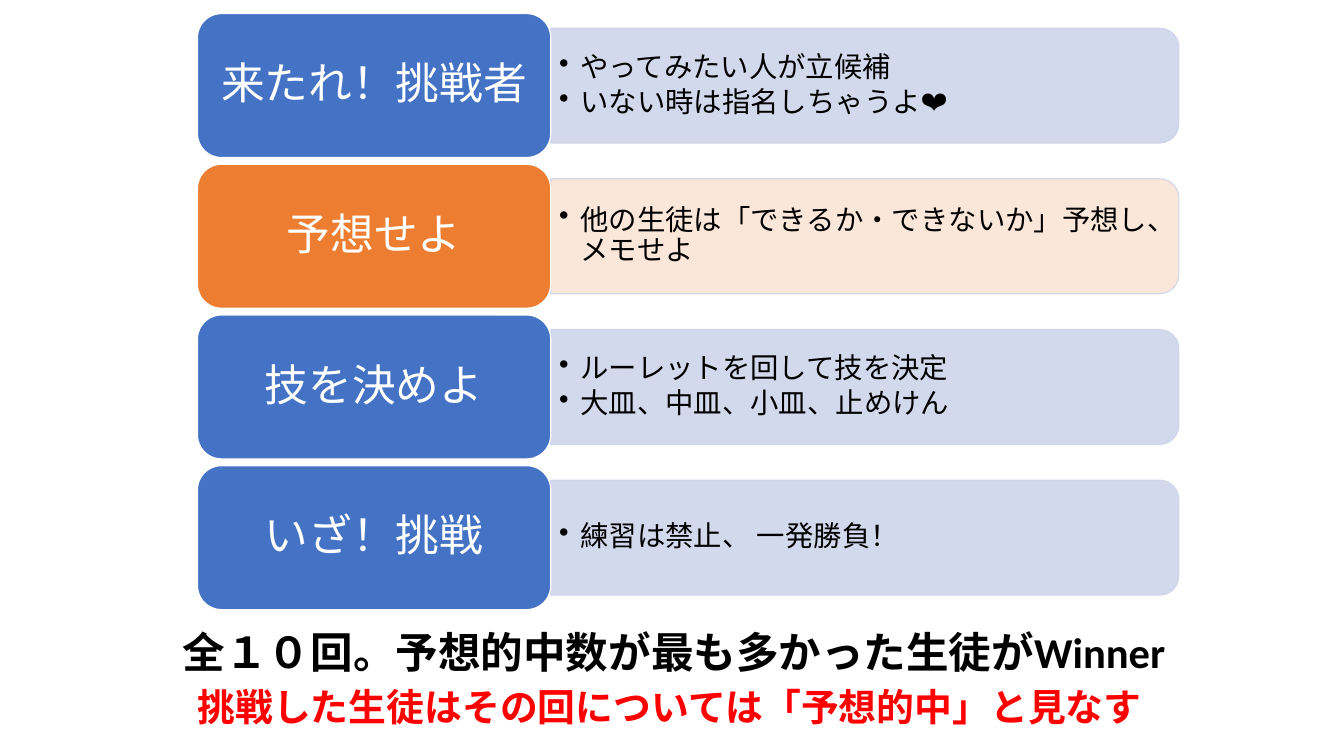
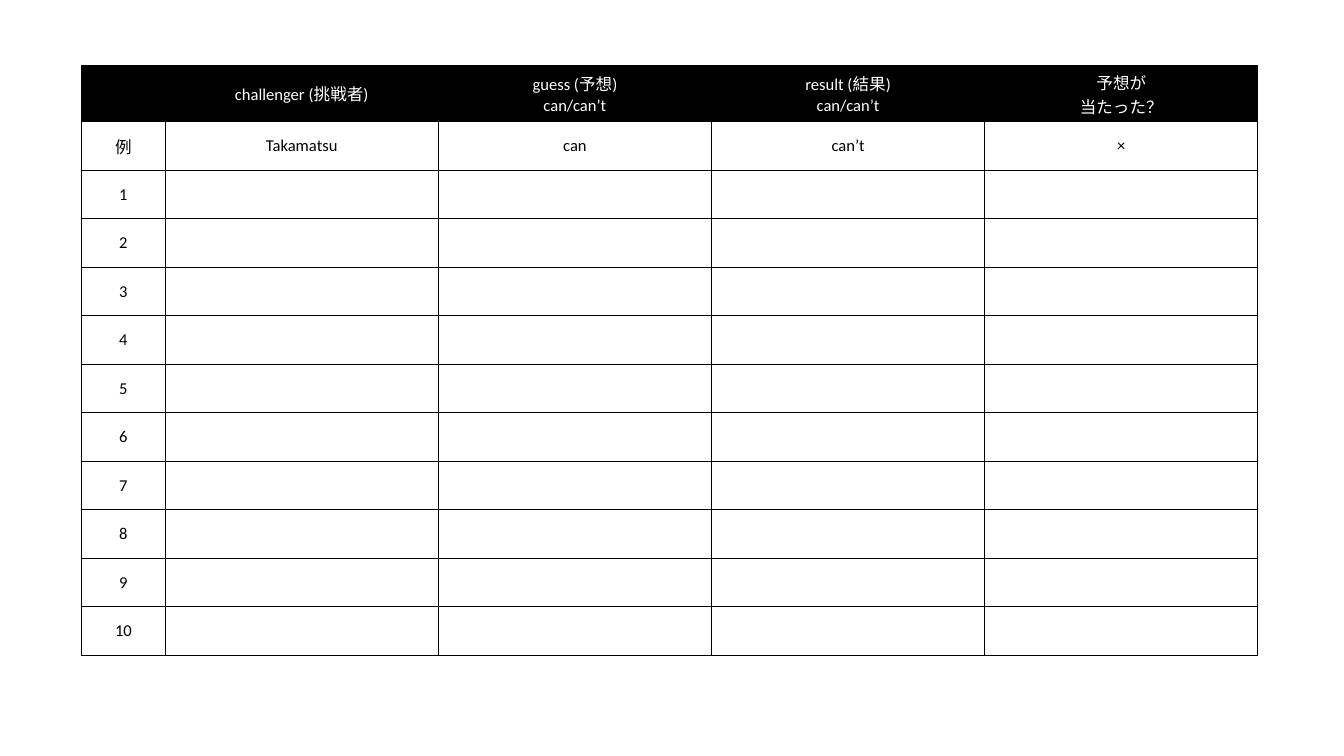
"""Build the rules slide and the score sheet of a classroom guessing game."""
import lxml.etree
import pptx
import pptx.dml.color
import pptx.enum.shapes
import pptx.enum.text
import pptx.oxml.ns
import pptx.util

Inches = pptx.util.Inches
Pt = pptx.util.Pt
RGBColor = pptx.dml.color.RGBColor
SHAPES = pptx.enum.shapes.MSO_SHAPE
ALIGN = pptx.enum.text.PP_ALIGN
MIDDLE = pptx.enum.text.MSO_ANCHOR.MIDDLE
qn = pptx.oxml.ns.qn

BLACK = RGBColor(0x00, 0x00, 0x00)
WHITE = RGBColor(0xFF, 0xFF, 0xFF)
RED = RGBColor(0xFF, 0x00, 0x00)
BLUE = RGBColor(0x44, 0x72, 0xC4)
ORANGE = RGBColor(0xED, 0x7D, 0x31)
PALE_BLUE = RGBColor(0xCF, 0xD5, 0xEA)
PALE_ORANGE = RGBColor(0xFB, 0xE5, 0xD6)
FONT = "Calibri"

STEP_TOP, STEP_PITCH = 0.16, 1.77
LABEL_LEFT, LABEL_WIDTH, LABEL_HEIGHT = 2.32, 4.15, 1.69
PANEL_LEFT, PANEL_WIDTH, PANEL_HEIGHT = LABEL_LEFT + LABEL_WIDTH, 7.38, 1.35

STEPS = [
    ("来たれ！挑戦者", ["やってみたい人が立候補", "いない時は指名しちゃうよ❤️"], BLUE, PALE_BLUE),
    ("予想せよ", ["他の生徒は「できるか・できないか」予想し、メモせよ"], ORANGE, PALE_ORANGE),
    ("技を決めよ", ["ルーレットを回して技を決定", "大皿、中皿、小皿、止めけん"], BLUE, PALE_BLUE),
    ("いざ！挑戦", ["練習は禁止、 一発勝負！"], BLUE, PALE_BLUE),
]
HEADINGS = ["", "challenger (挑戦者)", "guess (予想)\ncan/can’t",
            "result (結果)\ncan/can’t", "予想が\n当たった？"]
EXAMPLE = ["例", "Takamatsu", "can", "can’t", "×"]
ROUNDS = 10


class Deck:
    """Hold the shared style and the slide being filled."""

    def __init__(self):
        self.presentation = pptx.Presentation()
        self.presentation.slide_width = Inches(15.79)
        self.presentation.slide_height = Inches(8.88)
        self.slide = None

    def add_slide(self):
        self.slide = self.presentation.slides.add_slide(self.presentation.slide_layouts[6])

    def set_text(self, frame, text, size, color, align=ALIGN.LEFT, bold=False):
        frame.word_wrap = True
        frame.text = text
        for paragraph in frame.paragraphs:
            paragraph.alignment = align
            for run in paragraph.runs:
                run.font.name = FONT
                run.font.size = Pt(size)
                run.font.bold = bold
                run.font.color.rgb = color

    def shape(self, kind, left, top, width, height, fill, line):
        shape = self.slide.shapes.add_shape(
            kind, Inches(left), Inches(top), Inches(width), Inches(height))
        shape.shadow.inherit = False
        shape.fill.solid()
        shape.fill.fore_color.rgb = fill
        shape.line.color.rgb = line
        shape.line.width = Pt(1)
        return shape

    def text(self, text, left, top, width, height, size, color, bold=False):
        box = self.slide.shapes.add_textbox(
            Inches(left), Inches(top), Inches(width), Inches(height))
        self.set_text(box.text_frame, text, size, color, bold=bold)
        return box.text_frame

    def bullets(self, items, left, top, width, height):
        frame = self.text("\n".join(items), left, top, width, height, 24, BLACK)
        frame.vertical_anchor = MIDDLE
        for paragraph in frame.paragraphs:
            paragraph.line_spacing = 0.9
            paragraph.space_after = Pt(3.6)
            properties = paragraph._p.get_or_add_pPr()
            properties.set("marL", str(Inches(0.25)))
            properties.set("indent", str(-Inches(0.25)))
            lxml.etree.SubElement(properties, qn("a:buChar")).set("char", "•")

    def panel(self, items, top, fill):
        shift = (PANEL_WIDTH - PANEL_HEIGHT) / 2
        panel = self.shape(SHAPES.ROUND_2_SAME_RECTANGLE, PANEL_LEFT + shift, top - shift,
                           PANEL_HEIGHT, PANEL_WIDTH, fill, PALE_BLUE)
        panel.rotation = 90
        for color in panel._element.spPr.iter(qn("a:srgbClr")):
            lxml.etree.SubElement(color, qn("a:alpha")).set("val", "90000")
        self.bullets(items, PANEL_LEFT, top + 0.07, PANEL_WIDTH - 0.07, PANEL_HEIGHT - 0.14)

    def label(self, title, top, fill):
        label = self.shape(SHAPES.ROUNDED_RECTANGLE, LABEL_LEFT, top,
                           LABEL_WIDTH, LABEL_HEIGHT, fill, WHITE)
        frame = label.text_frame
        frame.margin_left = frame.margin_right = Inches(0.15)
        frame.margin_top = frame.margin_bottom = Inches(0.08)
        frame.vertical_anchor = MIDDLE
        self.set_text(frame, title, 37, WHITE, ALIGN.CENTER)
        frame.paragraphs[0].line_spacing = 0.9

    def borders(self, cell):
        properties = cell._tc.get_or_add_tcPr()
        for side in ("lnL", "lnR", "lnT", "lnB"):
            line = lxml.etree.SubElement(properties, qn("a:" + side))
            line.set("w", str(Pt(1)))
            fill = lxml.etree.SubElement(line, qn("a:solidFill"))
            lxml.etree.SubElement(fill, qn("a:srgbClr")).set("val", str(BLACK))

    def table(self, rows, left, top, widths, heights):
        table = self.slide.shapes.add_table(
            len(rows), len(widths), Inches(left), Inches(top),
            Inches(sum(widths)), Inches(sum(heights))).table
        table.first_row = table.horz_banding = False
        for column, width in zip(table.columns, widths):
            column.width = Inches(width)
        for index, (texts, height) in enumerate(zip(rows, heights)):
            table.rows[index].height = Inches(height)
            for cell, text in zip(table.rows[index].cells, texts):
                self.borders(cell)
                cell.fill.solid()
                cell.fill.fore_color.rgb = WHITE if index else BLACK
                cell.vertical_anchor = MIDDLE
                self.set_text(cell.text_frame, text, 14, BLACK if index else WHITE, ALIGN.CENTER)


def main():
    deck = Deck()

    deck.add_slide()
    for index, (title, items, label_fill, panel_fill) in enumerate(STEPS):
        top = STEP_TOP + index * STEP_PITCH
        deck.panel(items, top + (LABEL_HEIGHT - PANEL_HEIGHT) / 2, panel_fill)
        deck.label(title, top, label_fill)
    deck.text("全１０回。予想的中数が最も多かった生徒がWinner",
              2.05, 7.3, 12.08, 0.71, 36, BLACK, bold=True)
    deck.text("挑戦した生徒はその回については「予想的中」と見なす",
              2.22, 7.98, 11.91, 0.64, 32, RED, bold=True)

    deck.add_slide()
    rounds = [[str(number), "", "", "", ""] for number in range(1, ROUNDS + 1)]
    deck.table([HEADINGS, EXAMPLE, *rounds], 0.96, 0.77,
               [0.98] + [3.21] * 4, [0.66] + [0.57] * (ROUNDS + 1))

    deck.presentation.save("out.pptx")


if __name__ == "__main__":
    main()
